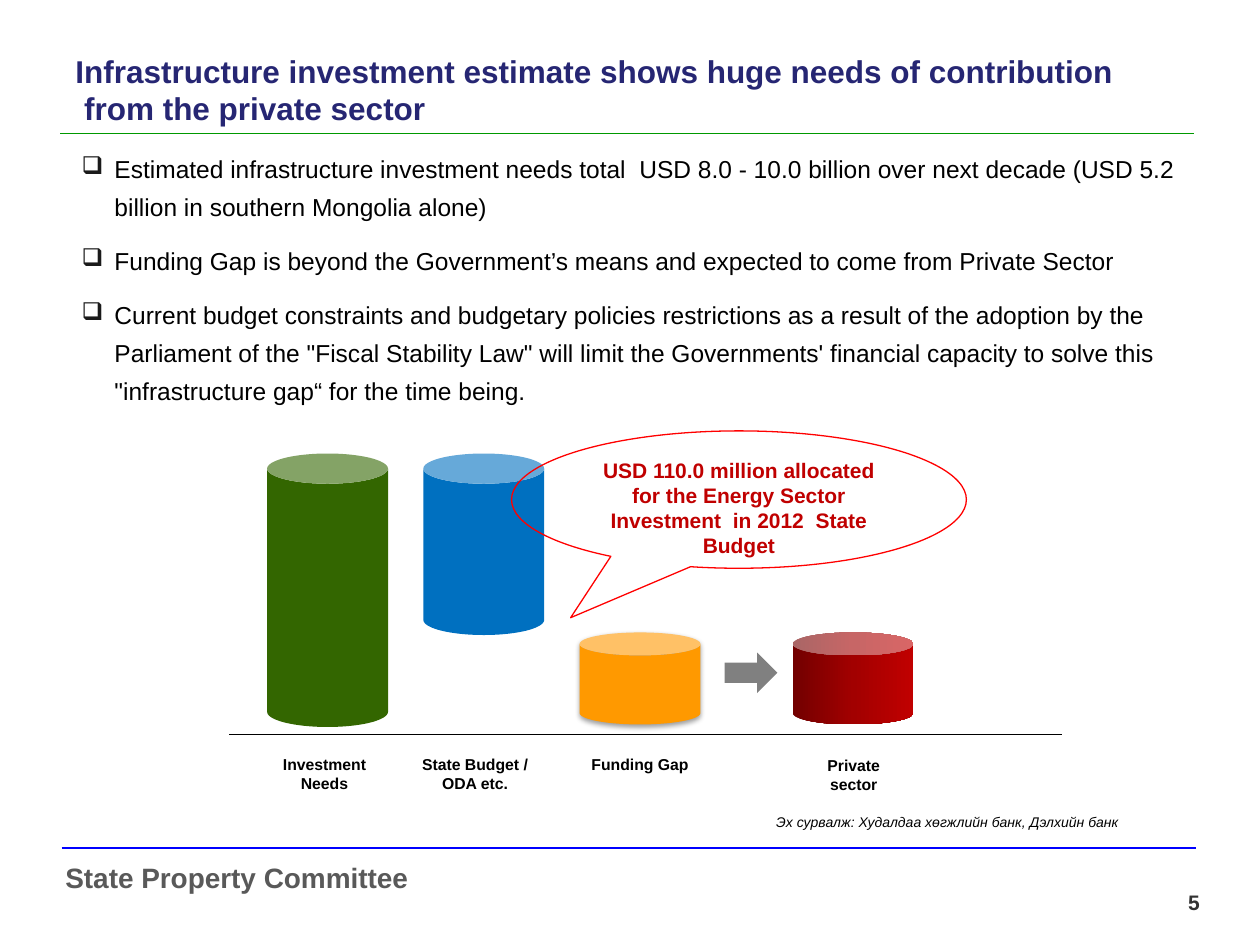
import copy
import pptx
import pptx.util
import pptx.dml.color
import pptx.enum.shapes
import pptx.enum.text
import pptx.oxml
import pptx.oxml.ns

Inches, Pt = pptx.util.Inches, pptx.util.Pt
Kind = pptx.enum.shapes.MSO_SHAPE
Align = pptx.enum.text.PP_ALIGN
Anchor = pptx.enum.text.MSO_ANCHOR
NS = pptx.oxml.ns.nsdecls("a")

TITLE = ("Infrastructure investment estimate shows huge needs of contribution"
         "\v from the private sector")
POINTS = [
    "Estimated infrastructure investment needs total  USD 8.0 - 10.0 billion "
    "over next decade (USD 5.2 billion in southern Mongolia alone)",
    "Funding Gap is beyond the Government’s means and expected to come from Private Sector",
    "Current budget constraints and budgetary policies restrictions as a result of the "
    "adoption by the Parliament of the \"Fiscal Stability Law\" will limit the Governments' "
    "financial capacity to solve this \"infrastructure gap“ for the time being.",
]
CALLOUT = "USD 110.0 million allocated for the Energy Sector Investment  in 2012  State Budget"
SOURCE = "Эх сурвалж: Худалдаа хөгжлийн банк, Дэлхийн банк"

RULES = [  # left, right, y, colour
    (0.49, 9.49, 6.73, "0000FF"),
    (0.48, 9.48, 1.06, "009900"),
    (1.82, 8.43, 5.83, "000000"),
]
LABELS = [  # text, left, top, width
    ("Investment Needs", 2, 5.94, 1.15),
    ("State Budget / ODA etc.", 3.25, 5.94, 1.04),
    ("Funding Gap", 4.56, 5.94, 1.04),
    ("Private sector", 6.35, 5.95, 0.85),
]
CANS = {  # left, top, height, colour
    "needs": (2.12, 3.6, 2.17, "336600"),
    "budget": (3.36, 3.6, 1.44, "0070C0"),
    "gap": (4.6, 5.02, 0.73, "FF9900"),
    "private": (6.29, 5.02, 0.73, "C00000"),
}
SHADES = [(0, "720000"), (0.5, "A20000"), (1, "C00000")]

deck = pptx.Presentation()
deck.slide_width, deck.slide_height = Inches(10), Inches(7.5)
slide = deck.slides.add_slide(deck.slide_layouts[6])


def rgb(code):
    return pptx.dml.color.RGBColor.from_string(code)


def style(frame, size, color, bold=False, italic=False, align=Align.LEFT):
    frame.word_wrap = True
    for para in frame.paragraphs:
        para.alignment = align
        for run in para.runs:
            font = run.font
            font.name, font.size = "Arial", Pt(size)
            font.bold, font.italic = bold, italic
            font.color.rgb = rgb(color)


def write(text, at, size, color, **look):
    frame = slide.shapes.add_textbox(*map(Inches, at)).text_frame
    frame.text = text
    style(frame, size, color, **look)
    return frame


def draw(kind, at, color=None):
    shape = slide.shapes.add_shape(kind, *map(Inches, at))
    shape.shadow.inherit = False
    shape.line.fill.background()
    if color:
        shape.fill.solid()
        shape.fill.fore_color.rgb = rgb(color)
    else:
        shape.fill.background()
    return shape


def rule(left, right, y, color):
    line = slide.shapes.add_connector(
        pptx.enum.shapes.MSO_CONNECTOR.STRAIGHT,
        Inches(left), Inches(y), Inches(right), Inches(y))
    line.line.color.rgb = rgb(color)
    line.line.width = Pt(1)
    line._element.spPr.append(pptx.oxml.parse_xml(f"<a:effectLst {NS}/>"))


def bullet(para):
    props = para._p.get_or_add_pPr()
    props.set("marL", str(Inches(0.26)))
    props.set("indent", str(Inches(-0.26)))
    for xml in (f'<a:buClr {NS}><a:srgbClr val="1A1A1A"/></a:buClr>',
                f'<a:buChar {NS} char="❑"/>'):
        props.append(pptx.oxml.parse_xml(xml))


def shade(shape):
    """Fill a shape from left to right with SHADES."""
    shape.fill.gradient()
    shape.fill.gradient_angle = 0
    stops = shape._element.spPr.xpath(".//a:gsLst")[0]
    stops.insert(1, copy.deepcopy(stops[0]))
    for stop, (place, color) in zip(shape.fill.gradient_stops, SHADES):
        stop.position = place
        stop.color.rgb = rgb(color)


def cast(shape):
    """Give a shape a soft shadow below it."""
    effects = shape._element.spPr.find(pptx.oxml.ns.qn("a:effectLst"))
    effects.append(pptx.oxml.parse_xml(
        f'<a:outerShdw {NS} blurRad="{Pt(3.1)}" dist="{Pt(1.6)}" dir="5400000" '
        'rotWithShape="0"><a:srgbClr val="000000"><a:alpha val="38000"/>'
        '</a:srgbClr></a:outerShdw>'))


for item in RULES:
    rule(*item)
write("5", (9.2, 7.01, 0.42, 0.52), 12, "333333", bold=True, align=Align.RIGHT)
write("State Property Committee", (0.42, 6.78, 5.42, 0.37), 16, "595959", bold=True)
title = write(TITLE, (0.5, 0.25, 8.98, 0.92), 18, "262673", bold=True)
title.vertical_anchor = Anchor.MIDDLE

body = write("\n".join(POINTS), (0.55, 1.1, 8.92, 4.65), 14, "000000")
for n, para in enumerate(body.paragraphs):
    para.line_spacing = 1.3
    para.space_before = Pt(3 if n else 0)
    para.space_after = Pt(6)
    bullet(para)

for text, left, top, width in LABELS:
    write(text, (left, top, width, 0.4), 9, "000000", bold=True, align=Align.CENTER)
draw(Kind.RIGHT_ARROW, (5.75, 5.18, 0.42, 0.32), "808080")
cans = {name: draw(Kind.CAN, (left, top, 0.96, height), color)
        for name, (left, top, height, color) in CANS.items()}
cast(cans["gap"])
shade(cans["private"])

bubble = draw(Kind.OVAL_CALLOUT, (4.06, 3.42, 3.61, 1.09))
bubble.adjustments[0], bubble.adjustments[1] = -0.37, 0.86
bubble.line.color.rgb = rgb("FF0000")
bubble.line.width = Pt(0.75)
bubble.text_frame.text = CALLOUT
bubble.text_frame.vertical_anchor = Anchor.TOP
style(bubble.text_frame, 12, "C00000", bold=True, align=Align.CENTER)

write(SOURCE, (5.56, 6.41, 3.42, 0.24), 8, "000000", italic=True, align=Align.RIGHT)
deck.save("out.pptx")
